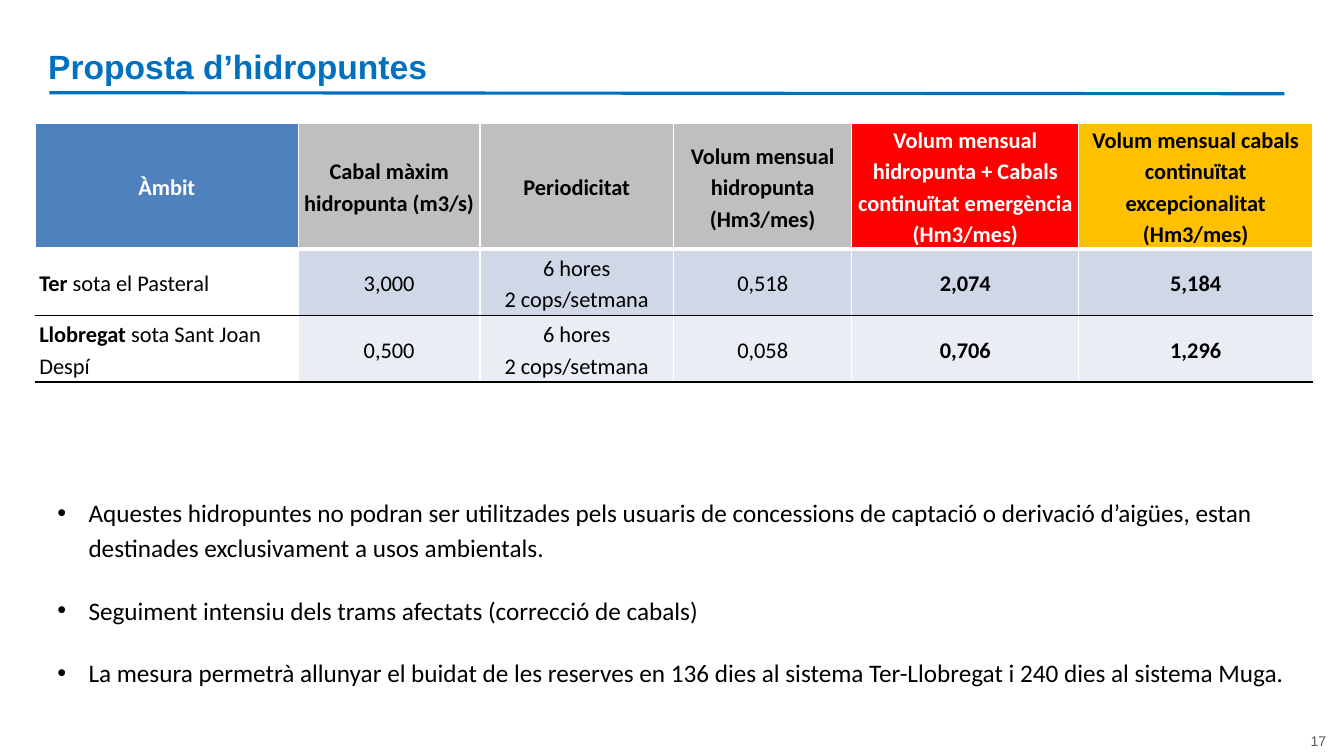
"""Builds the hydropeak proposal slide: title, flow table and three remarks."""
from lxml import etree
from pptx import Presentation, util as u
from pptx.dml.color import RGBColor
from pptx.enum import shapes, text
from pptx.oxml import parse_xml
from pptx.oxml.ns import nsdecls, qn

TITLE = "Proposta d’hidropuntes"
PAGE = "17"
HEADERS = [
    ("Àmbit", "4F81BD", "FFFFFF"),
    ("Cabal màxim hidropunta (m3/s)", "BFBFBF", "000000"),
    ("Periodicitat", "BFBFBF", "000000"),
    ("Volum mensual hidropunta (Hm3/mes)", "BFBFBF", "000000"),
    ("Volum mensual hidropunta + Cabals continuïtat emergència (Hm3/mes)", "FF0000", "FFFFFF"),
    ("Volum mensual cabals continuïtat excepcionalitat (Hm3/mes)", "FFC000", "000000"),
]
PERIOD = "6 hores\n2 cops/setmana"
FLOWS = [
    (("Ter", " sota el Pasteral"), "3,000", PERIOD, "0,518", "2,074", "5,184"),
    (("Llobregat", " sota Sant Joan Despí"), "0,500", PERIOD, "0,058", "0,706", "1,296"),
]
BANDS = ["D0D8E8", "E9EDF4"]
FIRST_BOLD_VOLUME = 4
COLUMN_WIDTHS = [2.61, 1.8, 1.92, 1.77, 2.25, 2.32]
ROW_HEIGHTS = [1.25, 0.66, 0.66]
ROW_EDGES = [
    (("FFFFFF", 1), ("FFFFFF", 3)),
    (("FFFFFF", 1), ("000000", 1)),
    (("000000", 1), ("000000", 1)),
]
REMARKS = [
    "Aquestes hidropuntes no podran ser utilitzades pels usuaris de concessions de captació "
    "o derivació d’aigües, estan destinades exclusivament a usos ambientals.",
    "Seguiment intensiu dels trams afectats (correcció de cabals)",
    "La mesura permetrà allunyar el buidat de les reserves en 136 dies al sistema "
    "Ter-Llobregat i 240 dies al sistema Muga.",
]
ALIGN = text.PP_ALIGN


def rgb(colour):
    return RGBColor.from_string(colour)


def style(paragraph, face, size, colour, bold=False, align=ALIGN.LEFT):
    paragraph.font.name = face
    paragraph.font.size = u.Pt(size)
    paragraph.font.bold = bold
    paragraph.font.color.rgb = rgb(colour)
    paragraph.alignment = align


def space(paragraph, gap):
    paragraph.line_spacing = 1.15
    paragraph.space_before = paragraph.space_after = u.Pt(gap)


def add_frame(slide, left, top, width, height):
    frame = slide.shapes.add_textbox(*map(u.Inches, (left, top, width, height))).text_frame
    frame.word_wrap = True
    return frame


def add_edge(cell, side, colour, width):
    cell._tc.get_or_add_tcPr().append(parse_xml(
        f'<a:ln{side} {nsdecls("a")} w="{u.Pt(width)}"><a:solidFill>'
        f'<a:srgbClr val="{colour}"/></a:solidFill></a:ln{side}>'))


def fill_cell(cell, content, fill, colour, bold, align, edges):
    top, bottom = edges
    white = ("FFFFFF", 1)
    for side, edge in zip("LRTB", (white, white, top, bottom)):
        add_edge(cell, side, *edge)
    cell.fill.solid()
    cell.fill.fore_color.rgb = rgb(fill)
    cell.vertical_anchor = text.MSO_ANCHOR.MIDDLE
    cell.margin_left = cell.margin_right = u.Inches(0.04)
    cell.margin_top = cell.margin_bottom = 0
    if isinstance(content, tuple):
        river, stretch = content
        paragraph = cell.text_frame.paragraphs[0]
        for words, weight in ((river, True), (stretch, False)):
            run = paragraph.add_run()
            run.text = words
            run.font.bold = weight
    else:
        cell.text_frame.text = content
    paragraphs = cell.text_frame.paragraphs
    for paragraph in paragraphs:
        style(paragraph, "Calibri", 16, colour, bold, align)
        space(paragraph, 10 if len(paragraphs) == 1 else 0)


def add_flow_table(slide):
    table = slide.shapes.add_table(
        len(ROW_HEIGHTS), len(COLUMN_WIDTHS), u.Inches(0.35), u.Inches(1.22),
        u.Inches(sum(COLUMN_WIDTHS)), u.Inches(sum(ROW_HEIGHTS))).table
    for column, width in zip(table.columns, COLUMN_WIDTHS):
        column.width = u.Inches(width)
    for row, height in zip(table.rows, ROW_HEIGHTS):
        row.height = u.Inches(height)
    for c, (label, fill, colour) in enumerate(HEADERS):
        fill_cell(table.cell(0, c), label, fill, colour, True, ALIGN.CENTER, ROW_EDGES[0])
    for r, (flow, band) in enumerate(zip(FLOWS, BANDS), 1):
        for c, content in enumerate(flow):
            fill_cell(table.cell(r, c), content, band if c else "FFFFFF", "000000",
                      c >= FIRST_BOLD_VOLUME, ALIGN.CENTER if c else ALIGN.LEFT, ROW_EDGES[r])


def add_remarks(slide):
    frame = add_frame(slide, 0.47, 4.84, 12.67, 2.03)
    frame.text = "\n".join(REMARKS)
    for paragraph in frame.paragraphs:
        style(paragraph, "Calibri", 18, "000000")
        space(paragraph, 10)
        props = paragraph._p.get_or_add_pPr()
        props.set("marL", str(u.Inches(0.31)))
        props.set("indent", str(-u.Inches(0.31)))
        bullet_font = parse_xml(f'<a:buFont {nsdecls("a")} typeface="Arial"/>')
        bullet = parse_xml(f'<a:buChar {nsdecls("a")} char="•"/>')
        props.find(qn("a:spcAft")).addnext(bullet_font)
        bullet_font.addnext(bullet)


def add_rule(slide):
    rule = slide.shapes.add_connector(
        shapes.MSO_CONNECTOR.STRAIGHT, *map(u.Inches, (0.49, 0.92, 12.74, 0.93)))
    rule.line.color.rgb = rgb("0070C0")
    rule.line.width = u.Pt(2.25)
    etree.SubElement(rule._element.spPr, qn("a:effectLst"))


def main():
    deck = Presentation()
    deck.slide_width, deck.slide_height = u.Inches(13.33), u.Inches(7.5)
    slide = deck.slides.add_slide(deck.slide_layouts[6])
    add_rule(slide)
    page = add_frame(slide, 12.66, 7.22, 0.59, 0.27)
    page.text = PAGE
    style(page.paragraphs[0], "Arial", 10, "595959", align=ALIGN.RIGHT)
    title = add_frame(slide, 0.38, 0.38, 10.62, 0.55)
    title.vertical_anchor = text.MSO_ANCHOR.MIDDLE
    title.text = TITLE
    style(title.paragraphs[0], "Arial", 24, "0070C0", bold=True)
    add_flow_table(slide)
    add_remarks(slide)
    deck.save("out.pptx")


if __name__ == "__main__":
    main()
